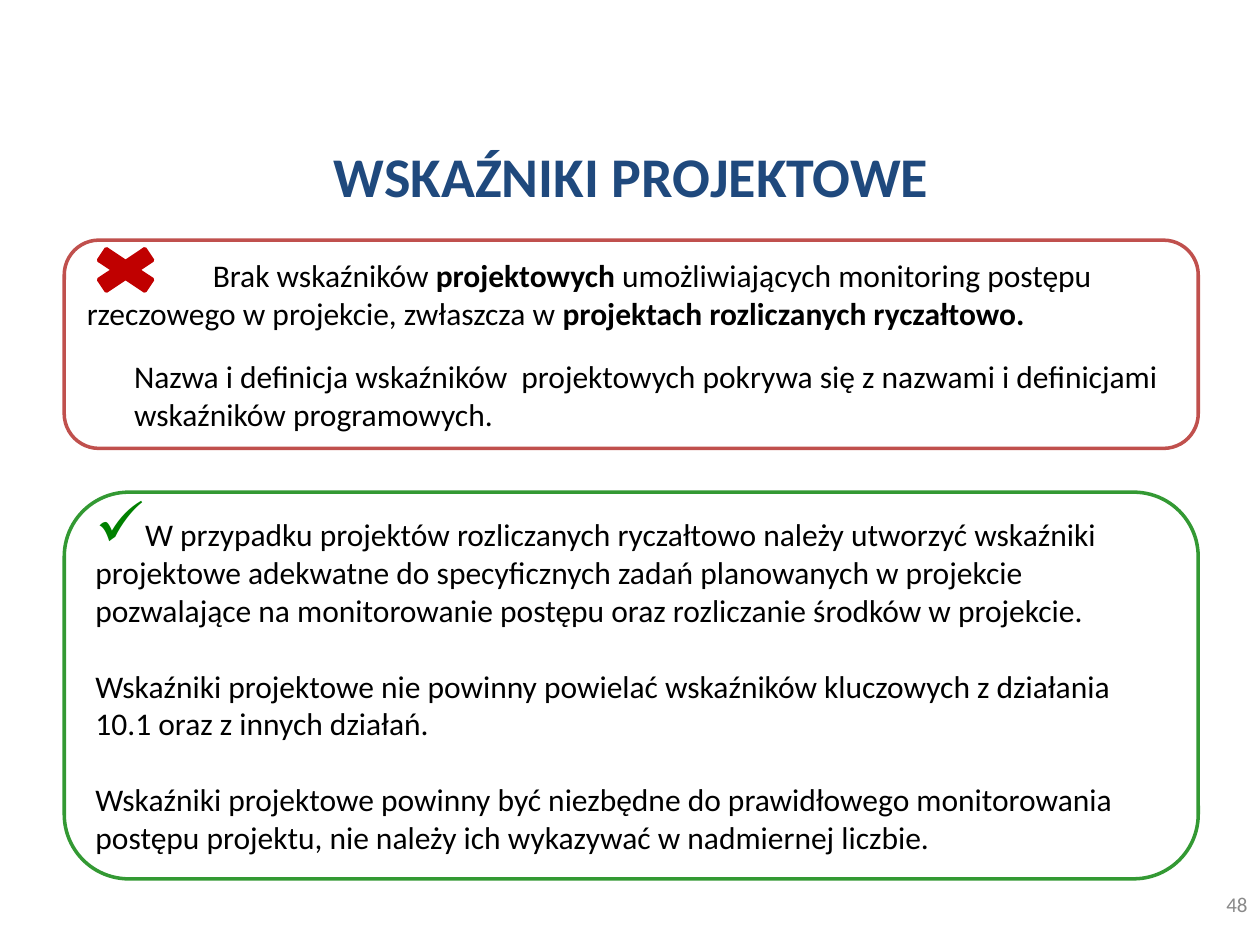
from lxml import etree
from pptx import Presentation
from pptx.dml.color import RGBColor
from pptx.enum.shapes import MSO_SHAPE
from pptx.enum.text import MSO_ANCHOR, PP_ALIGN
from pptx.oxml.ns import qn
from pptx.util import Pt

ROUND, CROSS = MSO_SHAPE.ROUNDED_RECTANGLE, MSO_SHAPE.MATH_MULTIPLY
MIDDLE = MSO_ANCHOR.MIDDLE
LEFT, CENTER, RIGHT = PP_ALIGN.LEFT, PP_ALIGN.CENTER, PP_ALIGN.RIGHT

NAVY = RGBColor(0x1F, 0x49, 0x7D)
RED = RGBColor(0xC0, 0x50, 0x4D)
DARK_RED = RGBColor(0xC0, 0x00, 0x00)
GREEN = RGBColor(0x33, 0x99, 0x33)
BLACK = RGBColor(0, 0, 0)
GRAY = RGBColor(0x89, 0x89, 0x89)
FONT = "Calibri"


def style(para, size, color, align=LEFT):
    para.alignment = align
    font = para.font
    font.name, font.size = FONT, Pt(size)
    font.color.rgb = color


def indent(para, left, first):
    props = para._p.get_or_add_pPr()
    props.set("marL", str(Pt(left)))
    props.set("indent", str(Pt(first)))


def add_check(para):
    props = para._p.get_or_add_pPr()
    tint = etree.SubElement(props, qn("a:buClr"))
    etree.SubElement(tint, qn("a:srgbClr"), val="008000")
    etree.SubElement(props, qn("a:buSzPct"), val="200000")
    etree.SubElement(props, qn("a:buChar"), char="✓")


def add_label(slide, box, text, size, color, align, bold=False):
    frame = slide.shapes.add_textbox(*map(Pt, box)).text_frame
    frame.word_wrap = True
    frame.vertical_anchor = MIDDLE
    para = frame.paragraphs[0]
    para.text = text
    style(para, size, color, align)
    para.font.bold = bold


def add_shape(slide, kind, box, line, fill=None):
    shape = slide.shapes.add_shape(kind, *map(Pt, box))
    shape.shadow.inherit = False
    if fill is None:
        shape.fill.background()
    else:
        shape.fill.solid()
        shape.fill.fore_color.rgb = fill
    shape.line.color.rgb = line
    shape.line.width = Pt(2)
    return shape


def add_panel(slide, box, line, count):
    """Draw a rounded frame and return its count empty paragraphs."""
    frame = add_shape(slide, ROUND, box, line).text_frame
    frame.word_wrap = True
    frame.vertical_anchor = MIDDLE
    for _ in range(count - 1):
        frame.add_paragraph()
    return frame.paragraphs


def add_errors(slide, box):
    left, top = box[:2]
    lead, note = add_panel(slide, box, RED, 2)
    parts = [
        ("Brak wskaźników ", False),
        ("projektowych", True),
        (" umożliwiających monitoring postępu rzeczowego w projekcie, "
         "zwłaszcza w ", False),
        ("projektach rozliczanych ryczałtowo.", True),
    ]
    for text, bold in parts:
        run = lead.add_run()
        run.text, run.font.bold = text, bold
    indent(lead, 0, 72)
    note.text = ("Nazwa i definicja wskaźników  projektowych pokrywa się z "
                 "nazwami i definicjami wskaźników programowych.")
    indent(note, 27, 0)
    note.space_before = Pt(14.4)
    for para in (lead, note):
        style(para, 18, BLACK)
    add_shape(slide, CROSS, (left + 9.5, top, 51, 34), DARK_RED, DARK_RED)


def add_advice(slide, box):
    texts = [
        ("W przypadku projektów rozliczanych ryczałtowo należy utworzyć "
         "wskaźniki", 0),
        ("projektowe adekwatne do specyficznych zadań planowanych w projekcie "
         "pozwalające na monitorowanie postępu oraz rozliczanie środków w "
         "projekcie.", 0),
        ("Wskaźniki projektowe nie powinny powielać wskaźników kluczowych z "
         "działania 10.1 oraz z innych działań.", 21.6),
        ("Wskaźniki projektowe powinny być niezbędne do prawidłowego "
         "monitorowania postępu projektu, nie należy ich wykazywać w "
         "nadmiernej liczbie.", 21.6),
    ]
    paras = add_panel(slide, box, GREEN, len(texts))
    indent(paras[0], 22.5, -22.5)
    add_check(paras[0])
    for para, (text, gap) in zip(paras, texts):
        para.text = text
        if gap:
            para.space_before = Pt(gap)
        style(para, 18, BLACK)


def main():
    deck = Presentation()
    deck.slide_width, deck.slide_height = Pt(720), Pt(540)
    slide = deck.slides.add_slide(deck.slide_layouts[6])
    left, width = 36.75, 648
    add_label(slide, (left, 83, width, 34.5), "WSKAŹNIKI PROJEKTOWE",
              32, NAVY, CENTER, True)
    add_errors(slide, (left, 137.25, width, 119))
    add_advice(slide, (left, 281.25, width, 221))
    add_label(slide, (552, 502.5, 168, 28.75), "48", 12, GRAY, RIGHT)
    deck.save("out.pptx")


if __name__ == "__main__":
    main()
